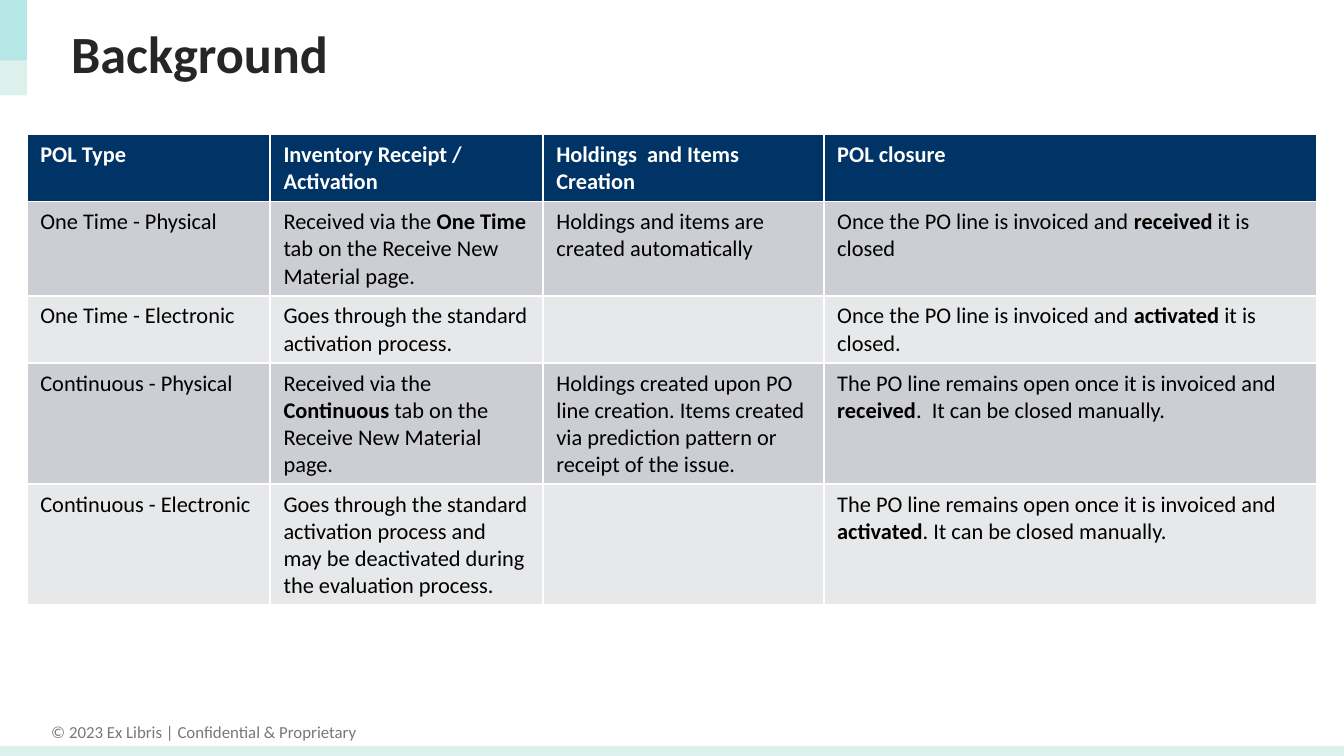
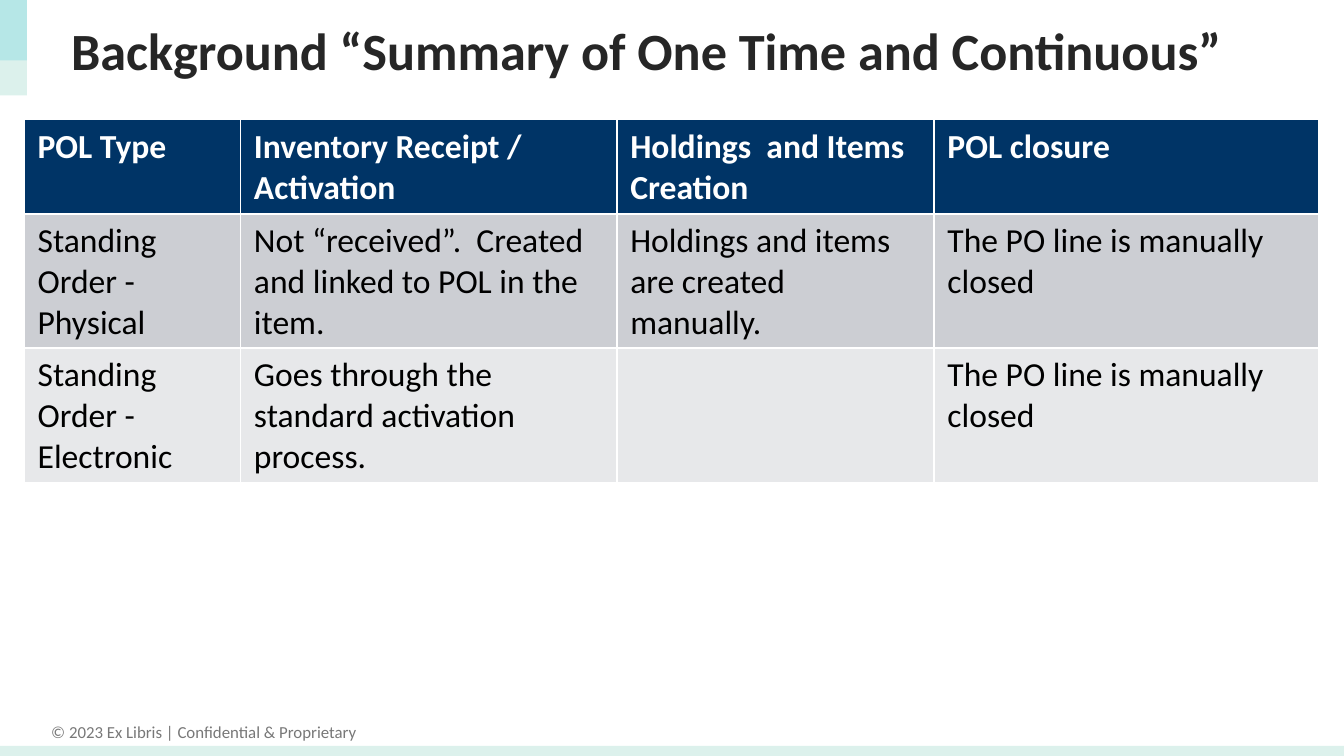
from lxml import etree
from pptx import Presentation
from pptx.dml.color import RGBColor
from pptx.enum.shapes import MSO_SHAPE
from pptx.enum.text import MSO_ANCHOR, MSO_AUTO_SIZE, PP_ALIGN
from pptx.oxml.ns import qn
from pptx.util import Inches, Pt

RECTANGLE = MSO_SHAPE.RECTANGLE
MIDDLE = MSO_ANCHOR.MIDDLE
FIT_SHAPE = MSO_AUTO_SIZE.SHAPE_TO_FIT_TEXT
NO_AUTOSIZE = MSO_AUTO_SIZE.NONE
LEFT, CENTER = PP_ALIGN.LEFT, PP_ALIGN.CENTER

WHITE = RGBColor(0xFF, 0xFF, 0xFF)
BLACK = RGBColor(0x00, 0x00, 0x00)
TITLE_INK = RGBColor(0x26, 0x26, 0x26)
FOOTER_GRAY = RGBColor(0x78, 0x78, 0x78)
MINT = RGBColor(0xDC, 0xF1, 0xEC)
TURQUOISE = RGBColor(0x50, 0xCF, 0xDA)
NAVY = RGBColor(0x00, 0x34, 0x66)
ROW_FILLS = (RGBColor(0xCC, 0xCE, 0xD3), RGBColor(0xE7, 0xE8, 0xEA))

FONT = "Calibri"
TITLE_ONLY = 5
SLIDE_WIDTH = Inches(10)
SLIDE_HEIGHT = SLIDE_WIDTH * 9 // 16
ROW_HEIGHT = 0.41
COPYRIGHT = "© 2023 Ex Libris | Confidential & Proprietary"

HEADINGS = ("POL Type", "Inventory Receipt / Activation",
            "Holdings  and Items Creation", "POL closure")
STANDARD_ACTIVATION = "Goes through the standard activation process."
MANUAL_CLOSURE = "The PO line is manually closed"

ORDER_TYPES = (
    ("One Time - Physical",
     "Received via the **One Time **tab on the Receive New Material page.",
     "Holdings and items are created automatically",
     "Once the PO line is invoiced and **received** it is closed"),
    ("One Time - Electronic",
     STANDARD_ACTIVATION,
     "",
     "Once the PO line is invoiced and **activated** it is closed."),
    ("Continuous - Physical",
     "Received via the **Continuous** tab on the Receive New Material page.",
     "Holdings created upon PO line creation. Items created via prediction "
     "pattern or receipt of the issue.",
     "The PO line remains open once it is invoiced and **received**.  "
     "It can be closed manually."),
    ("Continuous - Electronic",
     "Goes through the standard activation process and may be deactivated "
     "during the evaluation process.",
     "",
     "The PO line remains open once it is invoiced and **activated**. "
     "It can be closed manually."),
)

STANDING_ORDERS = (
    ("Standing Order - Physical",
     "Not “received”.  Created and linked to POL in the item.",
     "Holdings and items are created manually.",
     MANUAL_CLOSURE),
    ("Standing Order - Electronic", STANDARD_ACTIVATION, "", MANUAL_CLOSURE),
)


def write_text(frame, text, size, color, bold=False, align=LEFT, spacing=None):
    paragraph = frame.paragraphs[0]
    paragraph.alignment = align
    paragraph.line_spacing = spacing
    paragraph.font.size = Pt(size)
    for index, part in enumerate(text.split("**")):
        if part:
            run = paragraph.add_run()
            run.text = part
            run.font.name = FONT
            run.font.size = Pt(size)
            run.font.bold = bold or index % 2 == 1
            run.font.color.rgb = color


def add_band(slide, top, width, height, color, opacity=None):
    band = slide.shapes.add_shape(RECTANGLE, 0, Inches(top),
                                  Inches(width), Inches(height))
    band.shadow.inherit = False
    band.line.fill.background()
    band.fill.solid()
    band.fill.fore_color.rgb = color
    if opacity is not None:
        tint = band.fill._xPr.find(f".//{qn('a:srgbClr')}")
        etree.SubElement(tint, qn("a:alpha"), val=str(opacity * 1000))


def add_footer(slide):
    footer = slide.shapes.add_textbox(Inches(0.27), Inches(5.32),
                                      Inches(2.49), Inches(0.25))
    frame = footer.text_frame
    frame.word_wrap = False
    frame.auto_size = FIT_SHAPE
    write_text(frame, COPYRIGHT, 9, FOOTER_GRAY, align=CENTER)


def set_title(slide, text, spacing):
    title = slide.shapes.title
    title.left, title.top = Inches(0.43), Inches(0.08)
    title.width, title.height = Inches(9.21), Inches(0.63)
    frame = title.text_frame
    frame.word_wrap = True
    frame.auto_size = NO_AUTOSIZE
    frame.vertical_anchor = MIDDLE
    write_text(frame, text, 28, TITLE_INK, bold=True, spacing=spacing)


def add_titled_slide(deck, title, spacing=None):
    slide = deck.slides.add_slide(deck.slide_layouts[TITLE_ONLY])
    add_footer(slide)
    add_band(slide, 5.55, 10, 0.11, MINT)
    add_band(slide, 0, 0.2, 0.71, MINT)
    add_band(slide, 0, 0.2, 0.45, TURQUOISE, opacity=27)
    set_title(slide, title, spacing)
    return slide


def add_pol_table(slide, left, top, height, widths, body, size):
    rows = (HEADINGS, *body)
    holder = slide.shapes.add_table(len(rows), len(widths), Inches(left), Inches(top),
                                    Inches(sum(widths)), Inches(height))
    table = holder.table
    for column, width in zip(table.columns, widths):
        column.width = Inches(width)
    for row_index, texts in enumerate(rows):
        table.rows[row_index].height = Inches(ROW_HEIGHT)
        heading = row_index == 0
        for column_index, text in enumerate(texts):
            cell = table.cell(row_index, column_index)
            cell.fill.solid()
            cell.fill.fore_color.rgb = NAVY if heading else ROW_FILLS[(row_index - 1) % 2]
            write_text(cell.text_frame, text, size, WHITE if heading else BLACK,
                       bold=heading)
    holder.height = Inches(height)


def main():
    deck = Presentation()
    deck.slide_width, deck.slide_height = SLIDE_WIDTH, SLIDE_HEIGHT

    background = add_titled_slide(deck, "Background")
    add_pol_table(background, 0.2, 1, 3.5, (1.81, 2.03, 2.09, 3.67), ORDER_TYPES, 12)

    summary = add_titled_slide(
        deck, "Background “Summary of One Time and Continuous”", spacing=0.9)
    add_pol_table(summary, 0.18, 0.89, 2.7, (1.61, 2.8, 2.36, 2.86), STANDING_ORDERS, 18)

    deck.save("out.pptx")


if __name__ == "__main__":
    main()
